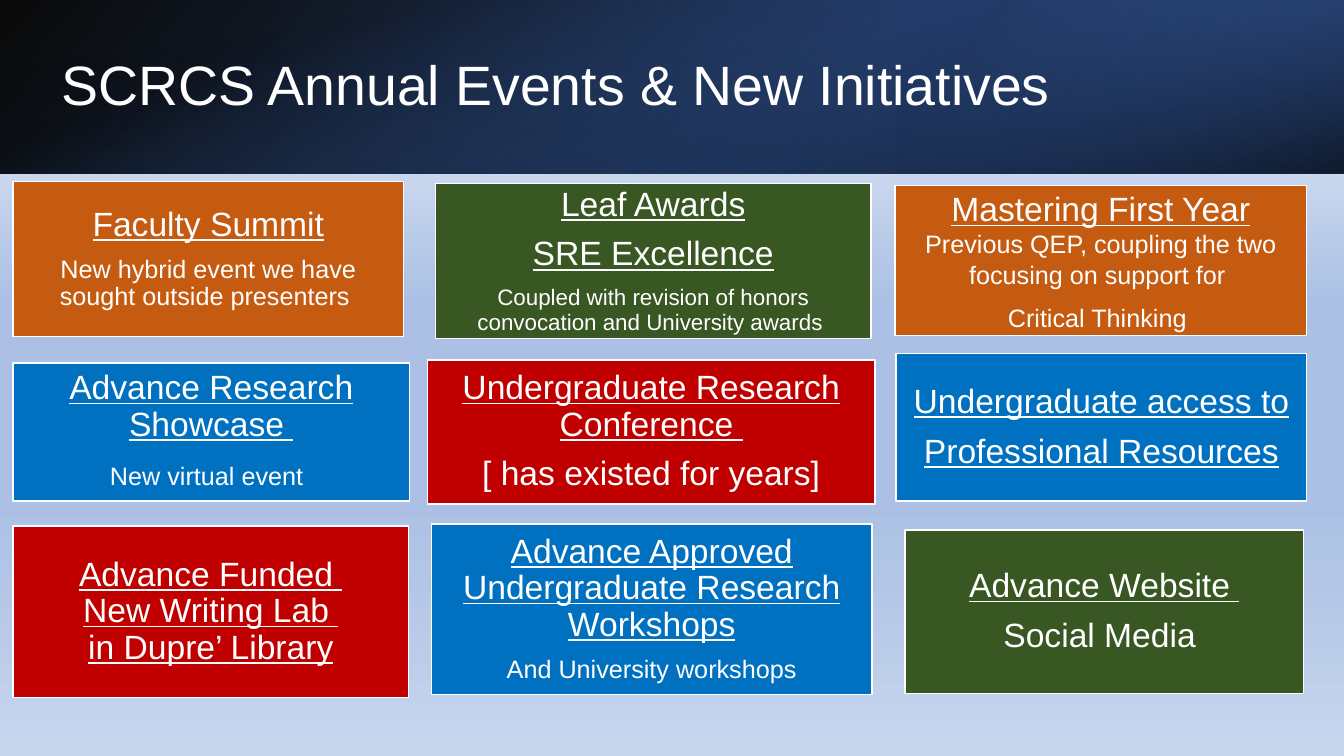
from dataclasses import dataclass
from lxml.etree import SubElement
from pptx import Presentation
from pptx.dml.color import RGBColor
from pptx.enum.shapes import MSO_SHAPE
from pptx.enum.text import MSO_ANCHOR, PP_ALIGN
from pptx.oxml.ns import qn
from pptx.util import Inches, Pt


@dataclass(frozen=True)
class Theme:
    """Colours and type of the slide."""
    font: str = "Arial"
    white: str = "FFFFFF"
    black: str = "000000"
    orange: str = "C55A11"
    green: str = "385723"
    blue: str = "0070C0"
    red: str = "C00000"
    navy: str = "203864"
    royal: str = "2F5597"
    sky: str = "4472C4"
    mist: str = "ABC0E4"
    title: float = 39.6
    head: int = 24
    mid: int = 20
    body: int = 18
    small: int = 16
    leading: float = 0.9
    gap: float = 0.4


T = Theme()
W, H = Inches(13.333), Inches(7.5)
BAND = 22.93

STYLES = {
    "title": {"size": Pt(T.title)},
    "head": {"size": Pt(T.head), "underline": True},
    "plain": {"size": Pt(T.head)},
    "mid": {"size": Pt(T.mid), "underline": True},
    "body": {"size": Pt(T.body)},
    "small": {"size": Pt(T.small)},
}

BACKDROP = [(0, "F6F8FC", 100), (40, T.mist, 100), (66, T.mist, 100), (100, "C7D5ED", 100)]

CARDS = [
    ((0.98, 24, 29.03, 20.53), T.orange, {}, [
        [("Faculty Summit", "head")],
        [("New hybrid event we have sought outside presenters ", "body")]]),
    ((32.4, 24.27, 32.4, 20.53), T.green, {}, [
        [("Leaf Awards", "head")],
        [("SRE Excellence", "head")],
        [("Coupled with revision of honors convocation and University awards ", "small")]]),
    ((66.6, 24.53, 30.6, 19.87), T.orange, {"leading": 1.0}, [
        [("Mastering First Year", "head"), (" ", "mid"),
         ("Previous QEP, coupling the two focusing on support for ", "body")],
        [("Critical Thinking ", "body")]]),
    ((0.98, 48, 29.48, 18.27), T.blue, {}, [
        [("Advance Research Showcase ", "head")],
        [("New virtual event", "body"), (" ", "plain")]]),
    ((31.8, 47.6, 33.3, 19.07), T.red, {}, [
        [("Undergraduate Research Conference ", "head")],
        [("[ has existed for years]", "plain")]]),
    ((66.68, 46.8, 30.53, 19.47), T.blue, {}, [
        [("Undergraduate access to", "head")],
        [("Professional Resources", "head")]]),
    ((0.98, 69.6, 29.4, 22.67), T.red, {"gap": 0}, [
        [("Advance Funded ", "head")],
        [("New Writing Lab ", "head")],
        [("in Dupre’ Library", "head")]]),
    ((32.1, 69.33, 32.78, 22.53), T.blue, {}, [
        [("Advance Approved Undergraduate Research Workshops", "head")],
        [("And University workshops", "body")]]),
    ((67.35, 70.13, 29.63, 21.6), T.green, {}, [
        [("Advance Website ", "head")],
        [("Social Media ", "plain")]]),
]


def apply(obj, values):
    """Set each attribute named in a dict."""
    for name, value in values.items():
        setattr(obj, name, value)


def place(x, y, w, h):
    """Turn percentages of the slide into lengths."""
    return [int(side * share / 100) for side, share in zip((W, H, W, H), (x, y, w, h))]


def paint_gradient(fill, root, stops, angle):
    """Fill with (position, colour, opacity) stops at a clockwise angle."""
    fill.gradient()
    fill.gradient_angle = (360 - angle) % 360
    stop_list = next(root.iter(qn("a:gsLst")))
    for old in list(stop_list):
        stop_list.remove(old)
    for position, colour, opacity in stops:
        stop = SubElement(stop_list, qn("a:gs"), pos=str(position * 1000))
        clr = SubElement(stop, qn("a:srgbClr"), val=colour)
        SubElement(clr, qn("a:alpha"), val=str(opacity * 1000))


def add_rect(s, box):
    """Add a rectangle without a shadow."""
    sp = s.shapes.add_shape(MSO_SHAPE.RECTANGLE, *box)
    sp.shadow.inherit = False
    return sp


def add_layer(s, box, stops, angle, rotation=0, flip=False):
    """Add one gradient layer of the header."""
    sp = add_rect(s, box)
    sp.line.fill.background()
    paint_gradient(sp.fill, sp._element, stops, angle)
    sp.rotation = rotation
    if flip:
        sp._element.spPr.xfrm.set("flipH", "1")


def write(tf, paragraphs, align, leading=T.leading, gap=T.gap):
    """Write paragraphs of styled runs."""
    apply(tf, {"word_wrap": True, "vertical_anchor": MSO_ANCHOR.MIDDLE})
    for i, runs in enumerate(paragraphs):
        p = tf.add_paragraph() if i else tf.paragraphs[0]
        after = int(STYLES[runs[0][1]]["size"] * gap)
        apply(p, {"alignment": align, "line_spacing": leading, "space_after": after})
        for text, style in runs:
            r = p.add_run()
            r.text = text
            apply(r.font, {"name": T.font, **STYLES[style]})
            r.font.color.rgb = RGBColor.from_string(T.white)


def add_card(s, box, colour, spacing, paragraphs):
    """Add a coloured card with centred text."""
    sp = add_rect(s, place(*box))
    sp.fill.solid()
    sp.fill.fore_color.rgb = RGBColor.from_string(colour)
    sp.line.color.rgb = RGBColor.from_string(T.white)
    sp.line.width = Pt(1)
    sides = ("left", "top", "right", "bottom")
    apply(sp.text_frame, {f"margin_{side}": Inches(0.1) for side in sides})
    write(sp.text_frame, paragraphs, PP_ALIGN.CENTER, **spacing)


def add_header(s):
    """Add the header layers and the title."""
    x, y, w, h = place(0, 0, 100, BAND)
    upright = ((w - h) // 2, (h - w) // 2, h, w)
    add_layer(s, (x, y, w, h), [(0, T.black, 96), (100, T.royal, 100)], 140, flip=True)
    add_layer(s, place(66.67, 0, 33.33, BAND),
              [(19, T.navy, 68), (100, T.sky, 79)], 320, 180, True)
    add_layer(s, upright, [(23, T.sky, 0), (99, T.black, 74)], 340, 90)
    tf = s.shapes.add_textbox(*place(3.83, 6.07, 96.17, 10.93)).text_frame
    write(tf, [[("SCRCS Annual Events & New Initiatives", "title")]], PP_ALIGN.LEFT, gap=0)


def main():
    """Build and save the slide."""
    prs = Presentation()
    apply(prs, {"slide_width": W, "slide_height": H})
    s = prs.slides.add_slide(prs.slide_layouts[6])
    paint_gradient(s.background.fill, s._element, BACKDROP, 90)
    add_header(s)
    for card in CARDS:
        add_card(s, *card)
    prs.save("out.pptx")


if __name__ == "__main__":
    main()
